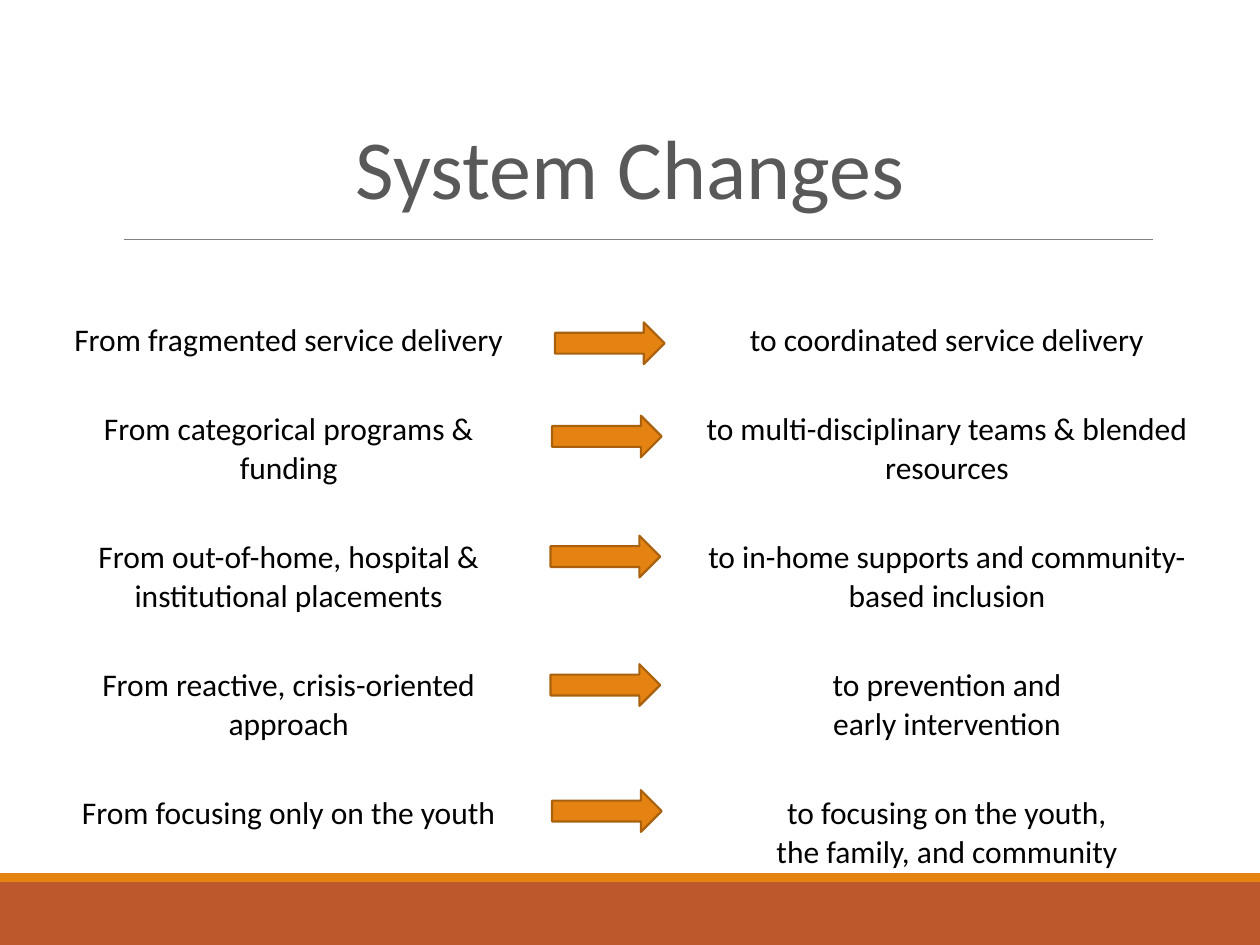
from dataclasses import dataclass

from lxml import etree
from pptx import Presentation
from pptx.dml.color import RGBColor
from pptx.enum.shapes import MSO_CONNECTOR, MSO_SHAPE
from pptx.enum.text import MSO_ANCHOR, MSO_AUTO_SIZE, PP_ALIGN
from pptx.oxml.ns import qn
from pptx.util import Cm, Pt

RECT, ARROW = MSO_SHAPE.RECTANGLE, MSO_SHAPE.RIGHT_ARROW
STRAIGHT = MSO_CONNECTOR.STRAIGHT
CENTER, MIDDLE, TOP = PP_ALIGN.CENTER, MSO_ANCHOR.MIDDLE, MSO_ANCHOR.TOP
GROW = MSO_AUTO_SIZE.SHAPE_TO_FIT_TEXT
PLAIN_GRID = "{2D5ABB26-0587-4C30-8999-92F81FD0307C}"


@dataclass(frozen=True)
class Theme:
    font: str = "Calibri"
    head: RGBColor = RGBColor(0x59, 0x59, 0x59)
    ink: RGBColor = RGBColor(0, 0, 0)
    rule: RGBColor = RGBColor(0x80, 0x80, 0x80)
    rust: RGBColor = RGBColor(0xBD, 0x58, 0x2C)
    gold: RGBColor = RGBColor(0xE4, 0x83, 0x12)
    edge: RGBColor = RGBColor(0xA9, 0x61, 0x0D)
    head_size: Pt = Pt(48)
    text_size: Pt = Pt(18)


THEME = Theme()
WIDE, HIGH = 25.4, 19.05
COLS = (10.06, 2.74, 11.0)
ROWS = (1.8, 2.58, 2.58, 2.58, 2.36)
CHANGES = (
    ("From fragmented service delivery", "to coordinated service delivery"),
    ("From categorical programs & funding",
     "to multi-disciplinary teams & blended resources"),
    ("From out-of-home, hospital & institutional placements",
     "to in-home supports and community-based inclusion"),
    ("From reactive, crisis-oriented approach",
     "to prevention and\nearly intervention"),
    ("From focusing only on the youth",
     "to focusing on the youth,\nthe family, and community"),
)
# Left and top of each arrow, relative to the table
ARROWS = ((10.4, 0.15), (10.34, 2.03), (10.31, 4.45),
          (10.31, 7.04), (10.34, 9.58))


def style(frame, size, color):
    for para in frame.paragraphs:
        para.alignment = CENTER
        para.font.name = THEME.font
        para.font.size = size
        para.font.color.rgb = color


def add_block(slide, kind, box, fill, edge=None):
    shape = slide.shapes.add_shape(kind, *map(Cm, box))
    shape.shadow.inherit = False
    shape.fill.solid()
    shape.fill.fore_color.rgb = fill
    if edge is None:
        shape.line.fill.background()
    else:
        shape.line.color.rgb = edge
        shape.line.width = Pt(1.25)


def add_footer(slide, left, top, width, height):
    strip = 0.18
    add_block(slide, RECT, (left, top + strip, width, height - strip), THEME.rust)
    add_block(slide, RECT, (left, top, width, strip), THEME.gold)


def add_rule(slide, left, top, width):
    rule = slide.shapes.add_connector(
        STRAIGHT, Cm(left), Cm(top), Cm(left + width), Cm(top))
    rule.line.color.rgb = THEME.rule
    rule.line.width = Pt(0.5)
    etree.SubElement(rule._element.spPr, qn("a:effectLst"))


def add_title(slide, left, top, width, height):
    title = slide.shapes.title
    title.left, title.top = Cm(left), Cm(top)
    title.width, title.height = Cm(width), Cm(height)
    frame = title.text_frame
    frame.text = "System Changes"
    frame.word_wrap = True
    frame.auto_size = GROW
    frame.vertical_anchor = MIDDLE
    style(frame, THEME.head_size, THEME.head)


def fill_cell(cell, text):
    cell.fill.background()
    cell.margin_left = cell.margin_right = Cm(0.28)
    cell.vertical_anchor = TOP
    cell.text = text
    style(cell.text_frame, THEME.text_size, THEME.ink)


def add_changes(slide, left, top):
    holder = slide.shapes.add_table(
        len(ROWS), len(COLS), Cm(left), Cm(top), Cm(sum(COLS)), Cm(sum(ROWS)))
    table = holder.table
    table.first_row = table.horz_banding = False
    next(holder._element.iter(qn("a:tableStyleId"))).text = PLAIN_GRID
    for col, width in zip(table.columns, COLS):
        col.width = Cm(width)
    for row, height, (old, new) in zip(table.rows, ROWS, CHANGES):
        row.height = Cm(height)
        for cell, text in zip(row.cells, (old, "", new)):
            fill_cell(cell, text)
    for x, y in ARROWS:
        box = (left + x, top + y, 2.21, 0.84)
        add_block(slide, ARROW, box, THEME.gold, THEME.edge)


def main():
    deck = Presentation()
    deck.slide_width, deck.slide_height = Cm(WIDE), Cm(HIGH)
    slide = deck.slides.add_slide(deck.slide_layouts[5])
    add_footer(slide, 0, 17.6, WIDE, HIGH - 17.6)
    add_rule(slide, 2.49, 4.83, 20.75)
    add_changes(slide, 0.79, 6.35)
    add_title(slide, 0.79, 2.18, 23.82, 2.31)
    deck.save("out.pptx")


if __name__ == "__main__":
    main()
